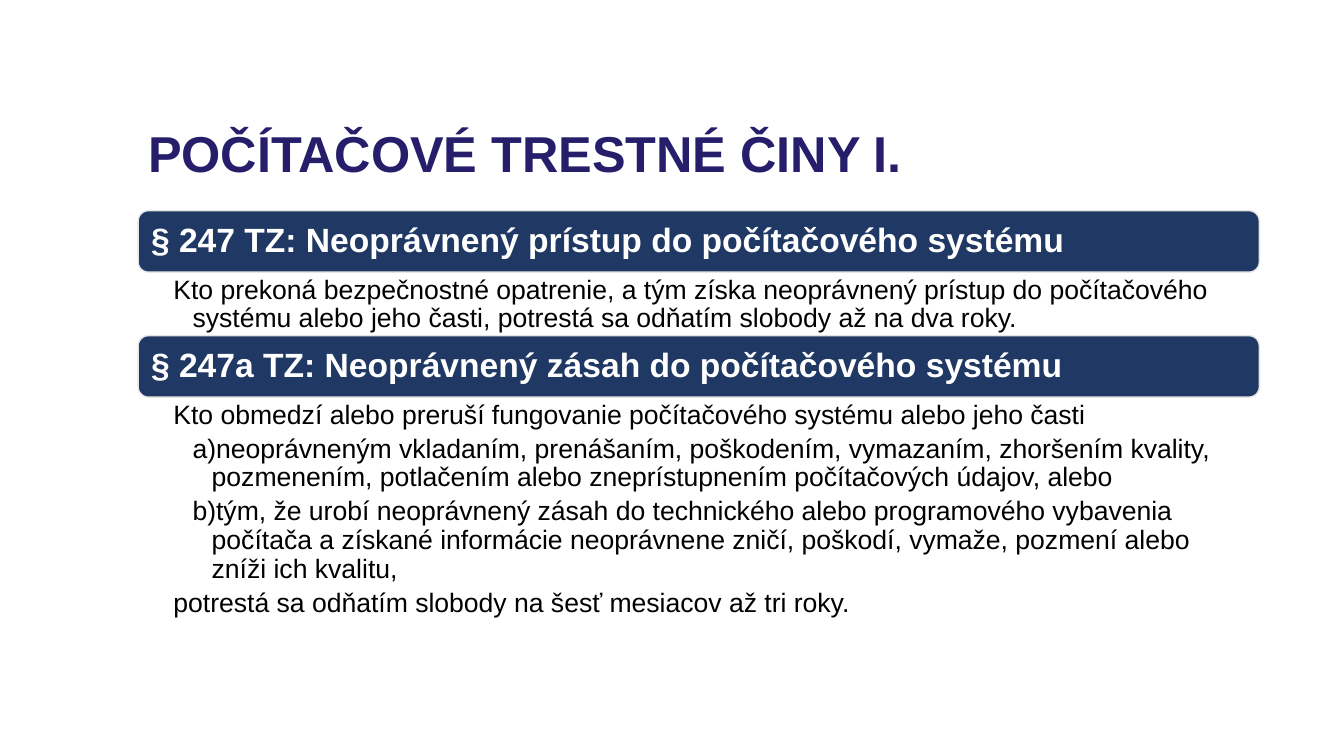
from dataclasses import dataclass

from lxml.etree import SubElement
from pptx import Presentation
from pptx.dml.color import RGBColor
from pptx.enum.shapes import MSO_SHAPE
from pptx.enum.text import MSO_ANCHOR, MSO_AUTO_SIZE, PP_ALIGN
from pptx.oxml.ns import qn
from pptx.util import Inches, Pt


@dataclass(frozen=True)
class Theme:
    """Colours and type sizes of the slide."""
    font: str = "Arial"
    title_color: RGBColor = RGBColor(0x26, 0x1E, 0x6A)
    bar_fill: RGBColor = RGBColor(0x20, 0x38, 0x64)
    bar_line: RGBColor = RGBColor(0xE7, 0xE6, 0xE6)
    bar_text: RGBColor = RGBColor(0xFF, 0xFF, 0xFF)
    body_text: RGBColor = RGBColor(0, 0, 0)
    title_size: float = 36
    bar_size: float = 24
    body_size: float = 19


THEME = Theme()
LEFT, WIDTH = 1.37, 11.12
BAR_HEIGHT = 0.61
INDENT = 0.19
SECTIONS = [
    (2.09, 0.62, "§ 247 TZ: Neoprávnený prístup do počítačového systému", [
        (1, "Kto prekoná bezpečnostné opatrenie, a tým získa neoprávnený prístup do počítačového "
            "systému alebo jeho časti, potrestá sa odňatím slobody až na dva roky."),
    ]),
    (3.33, 2.17, "§ 247a TZ: Neoprávnený zásah do počítačového systému", [
        (1, "Kto obmedzí alebo preruší fungovanie počítačového systému alebo jeho časti"),
        (2, "neoprávneným vkladaním, prenášaním, poškodením, vymazaním, zhoršením kvality, "
            "pozmenením, potlačením alebo zneprístupnením počítačových údajov, alebo"),
        (2, "tým, že urobí neoprávnený zásah do technického alebo programového vybavenia "
            "počítača a získané informácie neoprávnene zničí, poškodí, vymaže, pozmení alebo "
            "zníži ich kvalitu,"),
        (1, "potrestá sa odňatím slobody na šesť mesiacov až tri roky."),
    ]),
]


def set_frame(frame, anchor, left, top, right, bottom):
    """Set wrapping, anchor and insets of a text frame."""
    frame.word_wrap = True
    frame.auto_size = MSO_AUTO_SIZE.NONE
    frame.vertical_anchor = anchor
    frame.margin_left, frame.margin_top = Inches(left), Inches(top)
    frame.margin_right, frame.margin_bottom = Inches(right), Inches(bottom)


def style_paragraph(paragraph, size, color, bold=False):
    """Apply the shared paragraph and run formatting."""
    paragraph.alignment = PP_ALIGN.LEFT
    paragraph.line_spacing = 0.9
    for run in paragraph.runs:
        run.font.name = THEME.font
        run.font.size = Pt(size)
        run.font.bold = bold
        run.font.color.rgb = color


def add_title(slide, left, top, width, height):
    """Place and format the title placeholder."""
    title = slide.shapes.title
    title.left, title.top = Inches(left), Inches(top)
    title.width, title.height = Inches(width), Inches(height)
    title.text_frame.text = "POČÍTAČOVÉ TRESTNÉ ČINY I."
    set_frame(title.text_frame, MSO_ANCHOR.TOP, 0.1, 0.1, 0.1, 0.05)
    style_paragraph(title.text_frame.paragraphs[0], THEME.title_size, THEME.title_color, True)


def add_bar(slide, heading, left, top, width, height):
    """Draw a rounded bar that carries a section heading."""
    bar = slide.shapes.add_shape(MSO_SHAPE.ROUNDED_RECTANGLE, Inches(left), Inches(top),
                                 Inches(width), Inches(height))
    bar.shadow.inherit = False
    bar.fill.solid()
    bar.fill.fore_color.rgb = THEME.bar_fill
    bar.line.color.rgb = THEME.bar_line
    bar.line.width = Pt(1)
    bar.text_frame.text = heading
    set_frame(bar.text_frame, MSO_ANCHOR.MIDDLE, 0.1, 0.1, 0.1, 0.1)
    style_paragraph(bar.text_frame.paragraphs[0], THEME.bar_size, THEME.bar_text, True)


def add_provisions(slide, provisions, left, top, width, height):
    """Write the provisions, lettering those on the second level."""
    body = slide.shapes.add_textbox(Inches(left), Inches(top), Inches(width), Inches(height))
    frame = body.text_frame
    frame.text = "\n".join(wording for _, wording in provisions)
    set_frame(frame, MSO_ANCHOR.TOP, 0.35, 0.03, 0.19, 0.03)
    for paragraph, (level, _) in zip(frame.paragraphs, provisions):
        paragraph.level = level
        style_paragraph(paragraph, THEME.body_size, THEME.body_text)
        paragraph.space_after = Pt(0.2 * THEME.body_size)
        properties = paragraph._p.get_or_add_pPr()
        properties.set("marL", str(Inches(INDENT * level)))
        properties.set("indent", str(-Inches(INDENT)))
        if level == 2:
            SubElement(properties, qn("a:buAutoNum"), type="alphaLcParenR")
        else:
            SubElement(properties, qn("a:buNone"))


def add_section(slide, heading, provisions, left, top, width, body_height):
    """Stack a heading bar and its provisions."""
    add_bar(slide, heading, left, top, width, BAR_HEIGHT)
    add_provisions(slide, provisions, left, top + BAR_HEIGHT + 0.01, width, body_height)


def main():
    """Build and save the slide."""
    presentation = Presentation()
    presentation.slide_width, presentation.slide_height = Inches(13.33), Inches(7.5)
    slide = presentation.slides.add_slide(presentation.slide_layouts[5])
    add_title(slide, LEFT, 1.18, 11.05, 0.82)
    for top, body_height, heading, provisions in SECTIONS:
        add_section(slide, heading, provisions, LEFT, top, WIDTH, body_height)
    presentation.save("out.pptx")


if __name__ == "__main__":
    main()
